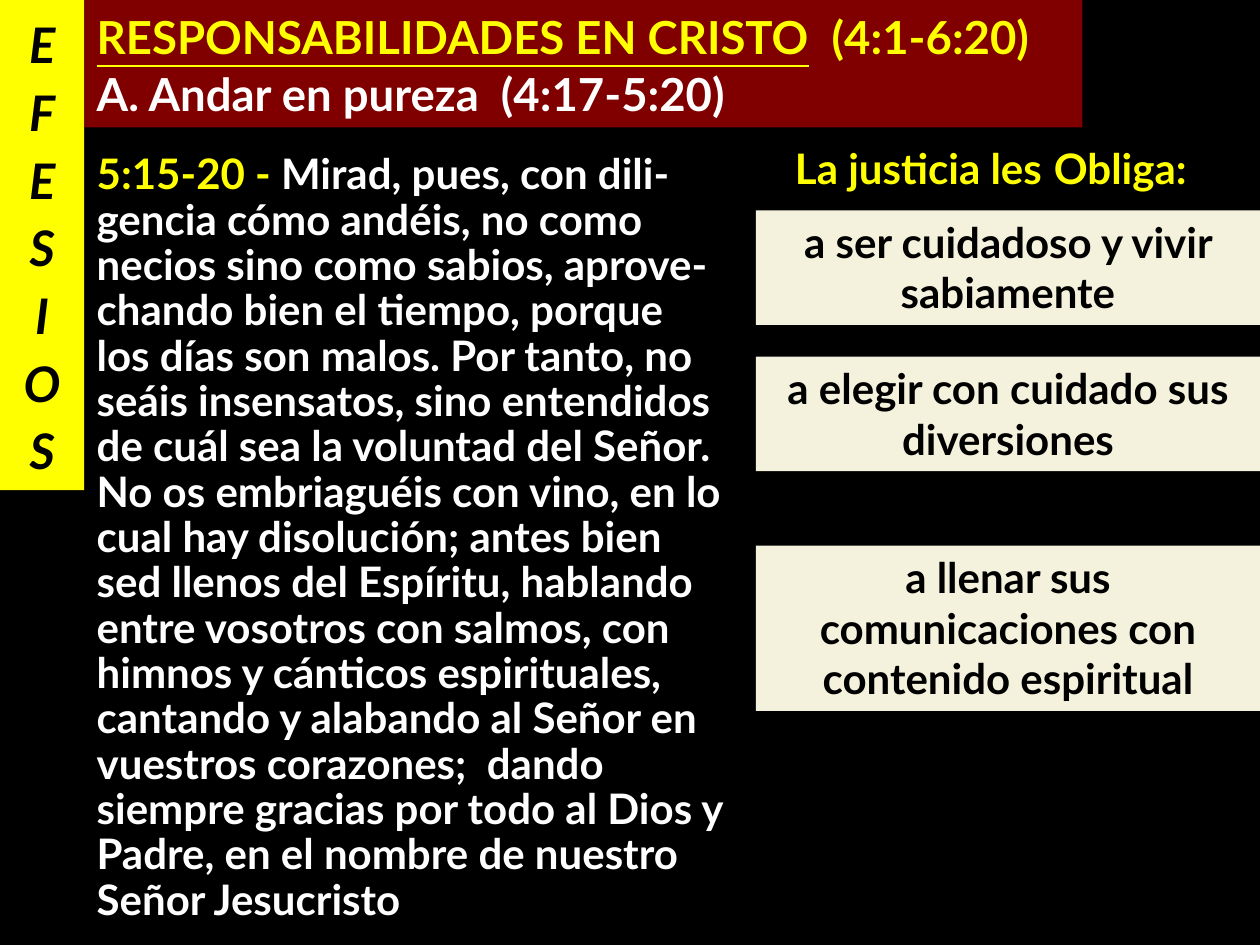
from pptx import Presentation
from pptx.dml.color import RGBColor
from pptx.enum.shapes import MSO_SHAPE
from pptx.enum.text import MSO_ANCHOR, MSO_AUTO_SIZE, PP_ALIGN
from pptx.util import Cm, Pt

FONT = "Lato"
HUES = {
    "black": "000000",
    "white": "FFFFFF",
    "yellow": "FFFF00",
    "red": "800000",
    "cream": "F4F1DC",
}
VERSE = (
    "Mirad, pues, con dili-gencia cómo andéis, no como necios sino como sabios, "
    "aprove-chando bien el tiempo, porque los días son malos. Por tanto, no seáis "
    "insensatos, sino entendidos de cuál sea la voluntad del Señor. No os embriaguéis "
    "con vino, en lo cual hay disolución; antes bien sed llenos del Espíritu, hablando "
    "entre vosotros con salmos, con himnos y cánticos espirituales, cantando y alabando "
    "al Señor en vuestros corazones;  dando siempre gracias por todo al Dios y Padre, "
    "en el nombre de nuestro Señor Jesucristo"
)
DUTIES = [
    ("a ser cuidadoso y vivir sabiamente", 4.24, 2.31),
    ("a elegir con cuidado sus diversiones", 7.19, 2.31),
    ("a llenar sus comunicaciones con contenido espiritual", 11, 3.33),
]


def hue(name):
    return RGBColor.from_string(HUES[name])


def set_frame(shape, anchor=MSO_ANCHOR.TOP):
    frame = shape.text_frame
    frame.word_wrap = True
    frame.auto_size = MSO_AUTO_SIZE.SHAPE_TO_FIT_TEXT
    frame.vertical_anchor = anchor
    return frame


def add_label(slide, *box):
    return set_frame(slide.shapes.add_textbox(*map(Cm, box)))


def add_panel(slide, fill, *box, anchor=MSO_ANCHOR.TOP):
    shape = slide.shapes.add_shape(MSO_SHAPE.RECTANGLE, *map(Cm, box))
    shape.shadow.inherit = False
    shape.fill.solid()
    shape.fill.fore_color.rgb = hue(fill)
    shape.line.fill.background()
    return set_frame(shape, anchor)


def add_line(frame, runs, size, color, align=PP_ALIGN.LEFT, space=1.0):
    """Fill the first empty paragraph or append one; return its runs."""
    first = frame.paragraphs[0]
    para = frame.add_paragraph() if first.runs else first
    para.alignment = align
    para.line_spacing = space
    font = para.font
    font.name, font.size, font.bold = FONT, Pt(size), True
    font.color.rgb = hue(color)
    parts = []
    for text in runs:
        part = para.add_run()
        part.text = text
        parts.append(part)
    return parts


def add_verse(slide):
    frame = add_label(slide, 1.7, 2.97, 13.13, 15.95)
    ref, _ = add_line(frame, ["5:15-20 - ", VERSE], 24, "white", space=0.9)
    ref.font.color.rgb = hue("yellow")


def add_duties(slide):
    for text, top, height in DUTIES:
        frame = add_panel(slide, "cream", 15.24, top, 10.16, height)
        add_line(frame, [text], 24, "black", PP_ALIGN.CENTER)
    frame = add_label(slide, 14.55, 2.74, 10.85, 1.27)
    words = ["La justicia les", "  ", "Obliga:"]
    gap = add_line(frame, words, 24, "yellow", PP_ALIGN.CENTER)[1]
    gap.font.size = Pt(14)


def add_title(slide):
    frame = add_panel(slide, "red", 1.7, 0, 20.12, 2.57, anchor=MSO_ANCHOR.MIDDLE)
    words = ["RESPONSABILIDADES EN CRISTO", "  (4:1-6:20)"]
    head, _ = add_line(frame, words, 26, "yellow", space=1.05)
    head.font.underline = True
    add_line(frame, ["A. Andar en pureza  (4:17-5:20)"], 26, "white", space=1.05)


def add_book(slide):
    frame = add_panel(slide, "yellow", 0, 0, 1.7, 9.88)
    for letter in "EFESIOS":
        part, = add_line(frame, [letter], 28, "black", PP_ALIGN.CENTER, 1.15)
        part.font.italic = True


def main():
    deck = Presentation()
    deck.slide_width, deck.slide_height = Cm(25.4), Cm(19.05)
    slide = deck.slides.add_slide(deck.slide_layouts[6])
    back = slide.background.fill
    back.solid()
    back.fore_color.rgb = hue("black")
    add_verse(slide)
    add_duties(slide)
    add_title(slide)
    add_book(slide)
    deck.save("out.pptx")


if __name__ == "__main__":
    main()
